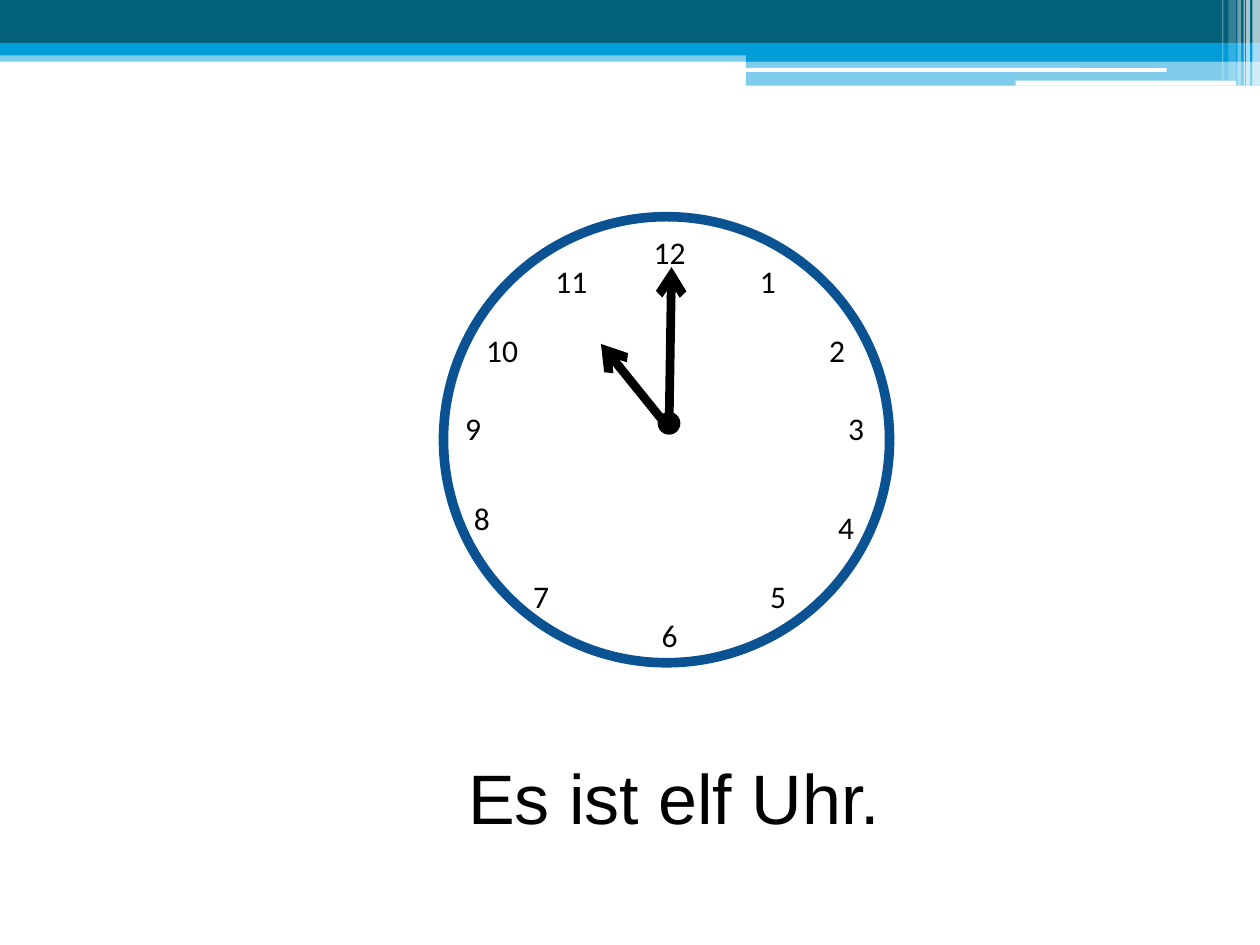
from dataclasses import dataclass

from lxml import etree
from pptx import Presentation
from pptx.dml.color import RGBColor
from pptx.enum.shapes import MSO_CONNECTOR, MSO_SHAPE
from pptx.enum.text import MSO_AUTO_SIZE, PP_ALIGN
from pptx.oxml.ns import qn
from pptx.util import Inches, Pt

RECT, ROUND, OVAL = MSO_SHAPE.RECTANGLE, MSO_SHAPE.ROUNDED_RECTANGLE, MSO_SHAPE.OVAL
STRAIGHT = MSO_CONNECTOR.STRAIGHT
CENTER = PP_ALIGN.CENTER
FIT = MSO_AUTO_SIZE.SHAPE_TO_FIT_TEXT

# The slide is a grid of 100 columns and 75 rows of square cells.
COLS, ROWS, CELL = 100, 75, 0.1


@dataclass(frozen=True)
class Theme:
    teal: str = "04617B"
    blue: str = "009DD9"
    rim: str = "0B5292"
    ink: str = "000000"
    paper: str = "FFFFFF"
    dial_font: str = "Calibri"
    caption_font: str = "Arial"
    dial_size: int = 18
    caption_size: int = 40
    rim_width: float = 5.5
    hand_width: float = 5
    hub_width: float = 1.5


THEME = Theme()

# left, top, width, height, colour, opacity in percent
BANDS = [
    (0, 4, 100, 0.9, THEME.blue, 50),
    (0, 0, 100, 3.4, THEME.teal, 100),
    (0, 3.4, 100, 1, THEME.blue, 100),
    (59.2, 3.9, 40.8, 1, THEME.blue, 100),
    (59.2, 4.8, 40.8, 2, THEME.blue, 50),
]
WHITE_BARS = [(59.1, 5.4, 33.5, 0.3), (80.6, 6.4, 17.5, 0.4)]
# left, width, height, opacity in percent
STRIPES = [
    (99.4, 0.6, 6.8, 65),
    (98.9, 0.3, 6.8, 65),
    (98.7, 0.1, 6.8, 60),
    (98.2, 0.3, 6.8, 40),
    (97.5, 0.6, 6.4, 20),
    (97, 0.1, 6.4, 30),
]
# left and top of the numerals 1 to 12
NUMERALS = [
    (58.6, 20.3), (64.1, 25.8), (65.6, 32), (64.8, 39.8), (59.4, 45.3), (50.8, 48.4),
    (40.6, 45.3), (35.9, 39.1), (35.2, 32), (37.5, 25.8), (43, 20.3), (50.8, 18),
]
NUMERAL_BOX = (4.7, 4)
PIVOT = (53.1, 34)
HAND_TIPS = [(47.7, 27.3), (53.3, 21.2)]


def cells(*counts):
    return [Inches(n * CELL) for n in counts]


def rgb(color):
    return RGBColor.from_string(color)


def add_shape(slide, kind, box, fill=None, opacity=100, line=None, width=1):
    sp = slide.shapes.add_shape(kind, *cells(*box))
    sp.shadow.inherit = False
    if fill:
        sp.fill.solid()
        sp.fill.fore_color.rgb = rgb(fill)
    else:
        sp.fill.background()
    if opacity < 100:
        clr = sp.element.spPr.find(qn("a:solidFill")).find(qn("a:srgbClr"))
        etree.SubElement(clr, qn("a:alpha"), val=str(opacity * 1000))
    if line:
        sp.line.color.rgb = rgb(line)
        sp.line.width = Pt(width)
    else:
        sp.line.fill.background()


def add_text(slide, text, box, font, size):
    tf = slide.shapes.add_textbox(*cells(*box)).text_frame
    tf.word_wrap = True
    tf.auto_size = FIT
    p = tf.paragraphs[0]
    p.alignment = CENTER
    r = p.add_run()
    r.text = text
    r.font.name = font
    r.font.size = Pt(size)
    r.font.color.rgb = rgb(THEME.ink)


def add_hand(slide, tip):
    """Arrow from the pivot of the clock to the tip of one hand."""
    hand = slide.shapes.add_connector(STRAIGHT, *cells(*PIVOT, *tip))
    hand.line.color.rgb = rgb(THEME.ink)
    hand.line.width = Pt(THEME.hand_width)
    etree.SubElement(hand.line._get_or_add_ln(), qn("a:tailEnd"), type="arrow")
    etree.SubElement(hand._element.spPr, qn("a:effectLst"))


def add_header(slide):
    for *box, color, opacity in BANDS:
        add_shape(slide, RECT, box, color, opacity)
    for box in WHITE_BARS:
        add_shape(slide, ROUND, box, THEME.paper)
    for left, width, height, opacity in STRIPES:
        add_shape(slide, RECT, (left, 0, width, height), THEME.paper, opacity)


def add_clock(slide):
    add_shape(slide, OVAL, (35.2, 17.2, 35.4, 35.4), line=THEME.rim, width=THEME.rim_width)
    for hour, corner in enumerate(NUMERALS, start=1):
        add_text(slide, str(hour), corner + NUMERAL_BOX, THEME.dial_font, THEME.dial_size)
    for tip in HAND_TIPS:
        add_hand(slide, tip)
    add_shape(slide, OVAL, (52.3, 32.8, 1.6, 1.6), THEME.ink,
              line=THEME.ink, width=THEME.hub_width)


def main():
    prs = Presentation()
    prs.slide_width, prs.slide_height = cells(COLS, ROWS)
    slide = prs.slides.add_slide(prs.slide_layouts[6])
    add_header(slide)
    add_clock(slide)
    add_text(slide, "Es ist elf Uhr.", (25, 59.4, 57, 7.7),
             THEME.caption_font, THEME.caption_size)
    prs.save("out.pptx")


if __name__ == "__main__":
    main()
